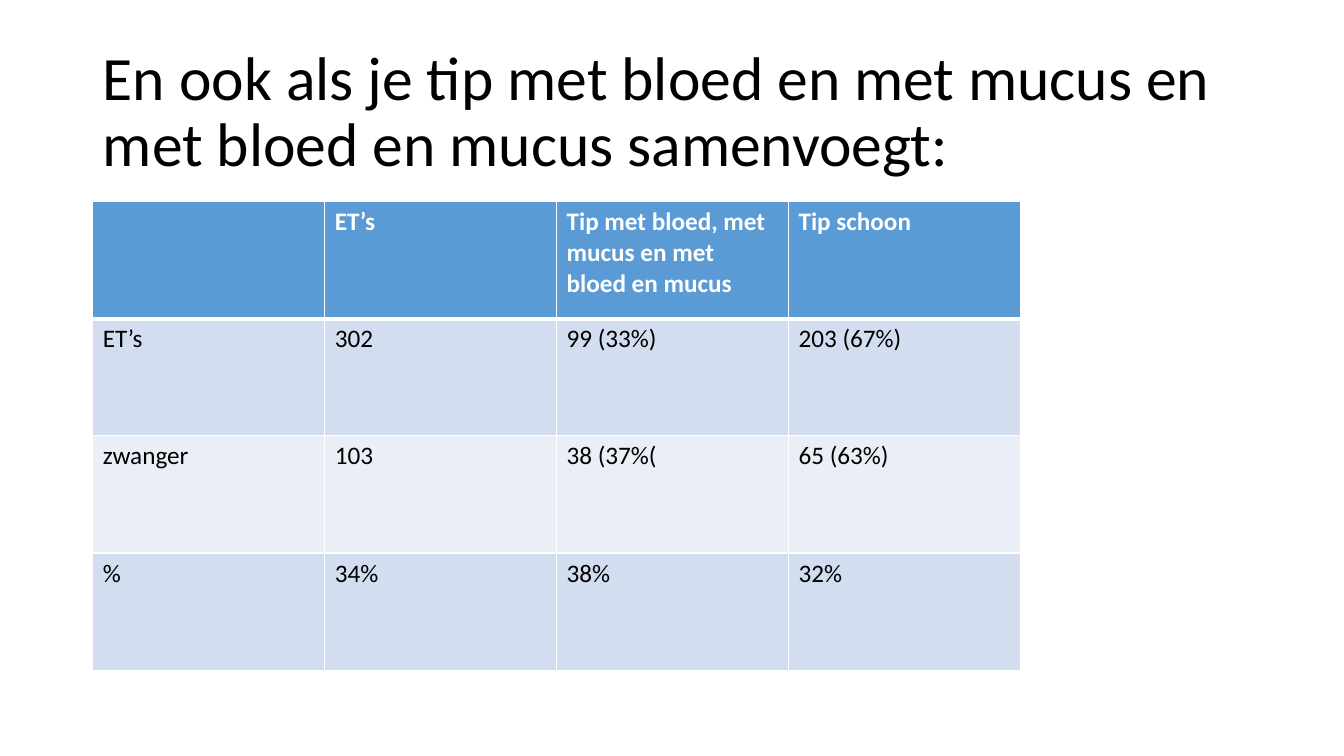
import dataclasses

import lxml.etree
import pptx
import pptx.dml.color
import pptx.enum.text
import pptx.oxml.ns
import pptx.util

Inches = pptx.util.Inches


@dataclasses.dataclass(frozen=True)
class Theme:
    """Hold the colours, font and type sizes of the slide."""
    font: str = "Calibri"
    title: int = 44
    body: int = 18
    ink: str = "000000"
    paper: str = "FFFFFF"
    head: str = "5B9BD5"
    bands: tuple = ("D2DEEF", "EAEFF7")


THEME = Theme()
TITLE = "En ook als je tip met bloed en met mucus en met bloed en mucus samenvoegt:"
ROWS = [
    ["", "ET’s", "Tip met bloed, met mucus en met bloed en mucus", "Tip schoon"],
    ["ET’s", "302", "99 (33%)", "203 (67%)"],
    ["zwanger", "103", "38 (37%(", "65 (63%)"],
    ["%", "34%", "38%", "32%"],
]


def add_run(para, text, size, tint, bold=False):
    """Add one styled run to a paragraph."""
    run = para.add_run()
    run.text = text
    run.font.name = THEME.font
    run.font.size = pptx.util.Pt(size)
    run.font.bold = bold
    run.font.color.rgb = pptx.dml.color.RGBColor.from_string(tint)


def add_edge(cell, side, width):
    """Draw one solid border of a cell, with its width in points."""
    tag = pptx.oxml.ns.qn
    props = cell._tc.get_or_add_tcPr()
    line = lxml.etree.SubElement(props, tag(f"a:ln{side}"), w=str(pptx.util.Pt(width)))
    fill = lxml.etree.SubElement(line, tag("a:solidFill"))
    lxml.etree.SubElement(fill, tag("a:srgbClr"), val=THEME.paper)


def put_title(slide, left, top, width, height):
    """Place the title in its box."""
    title = slide.shapes.title
    title.left, title.top, title.width, title.height = left, top, width, height
    frame = title.text_frame
    frame.word_wrap = True
    frame.auto_size = pptx.enum.text.MSO_AUTO_SIZE.NONE
    frame.vertical_anchor = pptx.enum.text.MSO_ANCHOR.MIDDLE
    para = frame.paragraphs[0]
    para.alignment = pptx.enum.text.PP_ALIGN.LEFT
    para.line_spacing = 0.9
    add_run(para, TITLE, THEME.title, THEME.ink)


def put_table(slide, left, top, width, height):
    """Fill the box with a table of equal rows and columns."""
    shape = slide.shapes.add_table(len(ROWS), len(ROWS[0]), left, top, width, height)
    table = shape.table
    for i, row in enumerate(ROWS):
        head = i == 0
        shade = THEME.head if head else THEME.bands[(i - 1) % 2]
        tint = THEME.paper if head else THEME.ink
        for j, text in enumerate(row):
            cell = table.cell(i, j)
            for side in "LRTB":
                add_edge(cell, side, 3 if head and side == "B" else 1)
            cell.fill.solid()
            cell.fill.fore_color.rgb = pptx.dml.color.RGBColor.from_string(shade)
            if text:
                add_run(cell.text_frame.paragraphs[0], text, THEME.body, tint, head)


def main():
    """Build the slide and save it."""
    deck = pptx.Presentation()
    deck.slide_width, deck.slide_height = Inches(13.33), Inches(7.5)
    slide = deck.slides.add_slide(deck.slide_layouts[5])
    left = Inches(0.92)
    put_title(slide, left, Inches(0.4), Inches(11.5), Inches(1.45))
    put_table(slide, left, Inches(2), Inches(9.2), Inches(4.65))
    deck.save("out.pptx")


if __name__ == "__main__":
    main()
